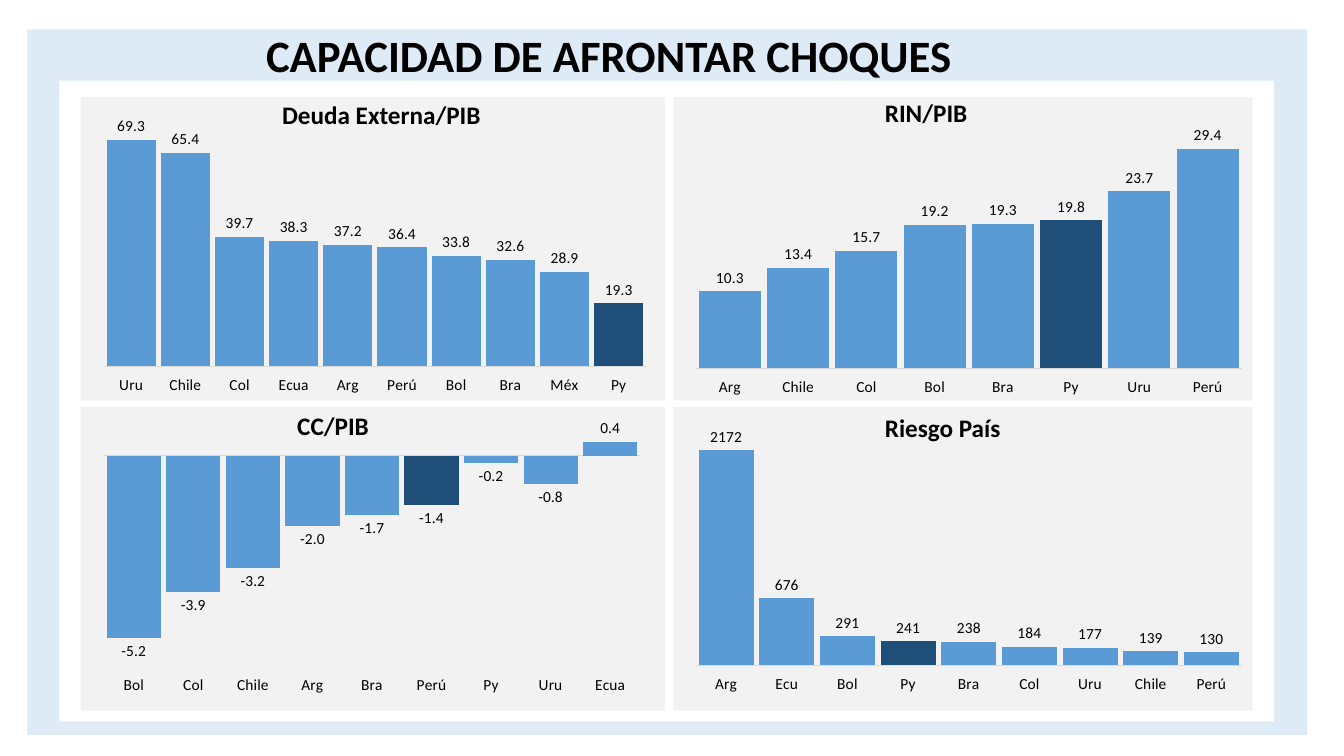
import pptx
import pptx.chart.data
import pptx.dml.color
import pptx.enum.chart
import pptx.enum.shapes
import pptx.enum.text
import pptx.util

Cm = pptx.util.Cm
RGBColor = pptx.dml.color.RGBColor

BLACK = RGBColor(0, 0, 0)
WHITE = RGBColor(255, 255, 255)
PALE_BLUE = RGBColor(0xDE, 0xEB, 0xF7)
PANEL_GRAY = RGBColor(0xF2, 0xF2, 0xF2)
AXIS_GRAY = RGBColor(0xD9, 0xD9, 0xD9)
BAR_BLUE = RGBColor(0x5B, 0x9B, 0xD5)
HIGHLIGHT_BLUE = RGBColor(0x1F, 0x4E, 0x79)

COLUMNS = ((2.03, 14.73), (16.97, 14.6))
ROWS = (2.44, 10.26)
PANEL_HEIGHT = 7.65

INDICATORS = (
    {
        "caption": ("Deuda Externa/PIB", 6.86, 2.39, 6.07),
        "place": (2.34, 2.49, 14.22, 7.62),
        "values": {"Uru": 69.3, "Chile": 65.4, "Col": 39.7, "Ecua": 38.3, "Arg": 37.2,
                   "Perú": 36.4, "Bol": 33.8, "Bra": 32.6, "Méx": 28.9, "Py": 19.3},
        "highlight": "Py", "scale": (0, 80), "number_format": "0.0",
    },
    {
        "caption": ("RIN/PIB", 22.05, 2.34, 2.87),
        "place": (17.25, 2.54, 14.33, 7.62),
        "values": {"Arg": 10.3, "Chile": 13.4, "Col": 15.7, "Bol": 19.2,
                   "Bra": 19.3, "Py": 19.8, "Uru": 23.7, "Perú": 29.4},
        "highlight": "Py", "scale": (0, 35), "number_format": "0.0",
    },
    {
        "caption": ("CC/PIB", 7.24, 10.21, 2.62),
        "place": (2.34, 10.46, 14.07, 7.19),
        "values": {"Bol": -5.2, "Col": -3.9, "Chile": -3.2, "Arg": -2.0, "Bra": -1.7,
                   "Perú": -1.4, "Py": -0.2, "Uru": -0.8, "Ecua": 0.4},
        "highlight": "Perú", "scale": (-6, 1), "number_format": "0.0",
    },
    {
        "caption": ("Riesgo País", 22.05, 10.26, 3.68),
        "place": (17.25, 10.39, 14.33, 7.24),
        "values": {"Arg": 2172, "Ecu": 676, "Bol": 291, "Py": 241, "Bra": 238,
                   "Col": 184, "Uru": 177, "Chile": 139, "Perú": 130},
        "highlight": "Py", "scale": (0, 2500), "number_format": "0",
    },
)


def apply(target, formats):
    for name, value in formats.items():
        setattr(target, name, value)


class Page:
    font_name = "Calibri"

    def __init__(self, deck):
        self.slide = deck.slides.add_slide(deck.slide_layouts[5])
        self.shapes = self.slide.shapes

    def style_font(self, font, size, bold=False):
        apply(font, {"name": self.font_name, "size": pptx.util.Pt(size), "bold": bold})
        font.color.rgb = BLACK

    def fill_text(self, box, text, size):
        apply(box.text_frame, {
            "word_wrap": False,
            "auto_size": pptx.enum.text.MSO_AUTO_SIZE.SHAPE_TO_FIT_TEXT,
            "vertical_anchor": pptx.enum.text.MSO_ANCHOR.TOP,
        })
        para = box.text_frame.paragraphs[0]
        para.alignment = pptx.enum.text.PP_ALIGN.LEFT
        span = para.add_run()
        span.text = text
        self.style_font(span.font, size, True)

    def title(self, text, left, top, width, height):
        box = self.shapes.title
        apply(box, {"left": Cm(left), "top": Cm(top), "width": Cm(width), "height": Cm(height)})
        self.fill_text(box, text, 32)
        box.element.getparent().append(box.element)

    def caption(self, text, left, top, width):
        box = self.shapes.add_textbox(Cm(left), Cm(top), Cm(width), Cm(1.02))
        self.fill_text(box, text, 18)

    def panel(self, left, top, width, height, color):
        box = self.shapes.add_shape(
            pptx.enum.shapes.MSO_SHAPE.RECTANGLE, Cm(left), Cm(top), Cm(width), Cm(height))
        box.shadow.inherit = False
        box.fill.solid()
        box.fill.fore_color.rgb = color
        box.line.fill.background()

    def column_chart(self, place, values, highlight, scale, number_format):
        data = pptx.chart.data.CategoryChartData(number_format=number_format)
        data.categories = list(values)
        data.add_series("Series 1", list(values.values()))
        chart = self.shapes.add_chart(
            pptx.enum.chart.XL_CHART_TYPE.COLUMN_CLUSTERED, *map(Cm, place), data).chart
        apply(chart, {"has_title": False, "has_legend": False})
        self.style_font(chart.font, 11)

        apply(chart.value_axis, {
            "visible": False, "has_major_gridlines": False,
            "minimum_scale": scale[0], "maximum_scale": scale[1],
        })
        axis = chart.category_axis
        apply(axis, {
            "major_tick_mark": pptx.enum.chart.XL_TICK_MARK.NONE,
            "tick_label_position": pptx.enum.chart.XL_TICK_LABEL_POSITION.LOW,
            "has_major_gridlines": False,
        })
        axis.format.line.color.rgb = AXIS_GRAY
        axis.format.line.width = pptx.util.Pt(0.75)
        self.style_font(axis.tick_labels.font, 11)

        plot = chart.plots[0]
        apply(plot, {"gap_width": 10, "overlap": -27,
                     "vary_by_categories": False, "has_data_labels": True})
        apply(plot.data_labels, {
            "show_value": True, "number_format": number_format,
            "number_format_is_linked": False,
            "position": pptx.enum.chart.XL_LABEL_POSITION.OUTSIDE_END,
        })
        self.style_font(plot.data_labels.font, 11)

        series = plot.series[0]
        series.invert_if_negative = False
        point = series.points[list(values).index(highlight)]
        for bar, color in ((series, BAR_BLUE), (point, HIGHLIGHT_BLUE)):
            bar.format.fill.solid()
            bar.format.fill.fore_color.rgb = color


def main():
    deck = pptx.Presentation()
    apply(deck, {"slide_width": Cm(33.87), "slide_height": Cm(19.05)})
    page = Page(deck)
    page.panel(0.69, 0.74, 32.26, 17.78, PALE_BLUE)
    page.panel(1.5, 2.03, 30.61, 16.15, WHITE)
    for top in ROWS:
        for left, width in COLUMNS:
            page.panel(left, top, width, PANEL_HEIGHT, PANEL_GRAY)
    for indicator in INDICATORS:
        page.caption(*indicator["caption"])
    page.title("CAPACIDAD DE AFRONTAR CHOQUES", 6.45, 0.58, 21.82, 1.63)
    for indicator in INDICATORS:
        page.column_chart(indicator["place"], indicator["values"], indicator["highlight"],
                          indicator["scale"], indicator["number_format"])
    deck.save("out.pptx")


if __name__ == "__main__":
    main()
